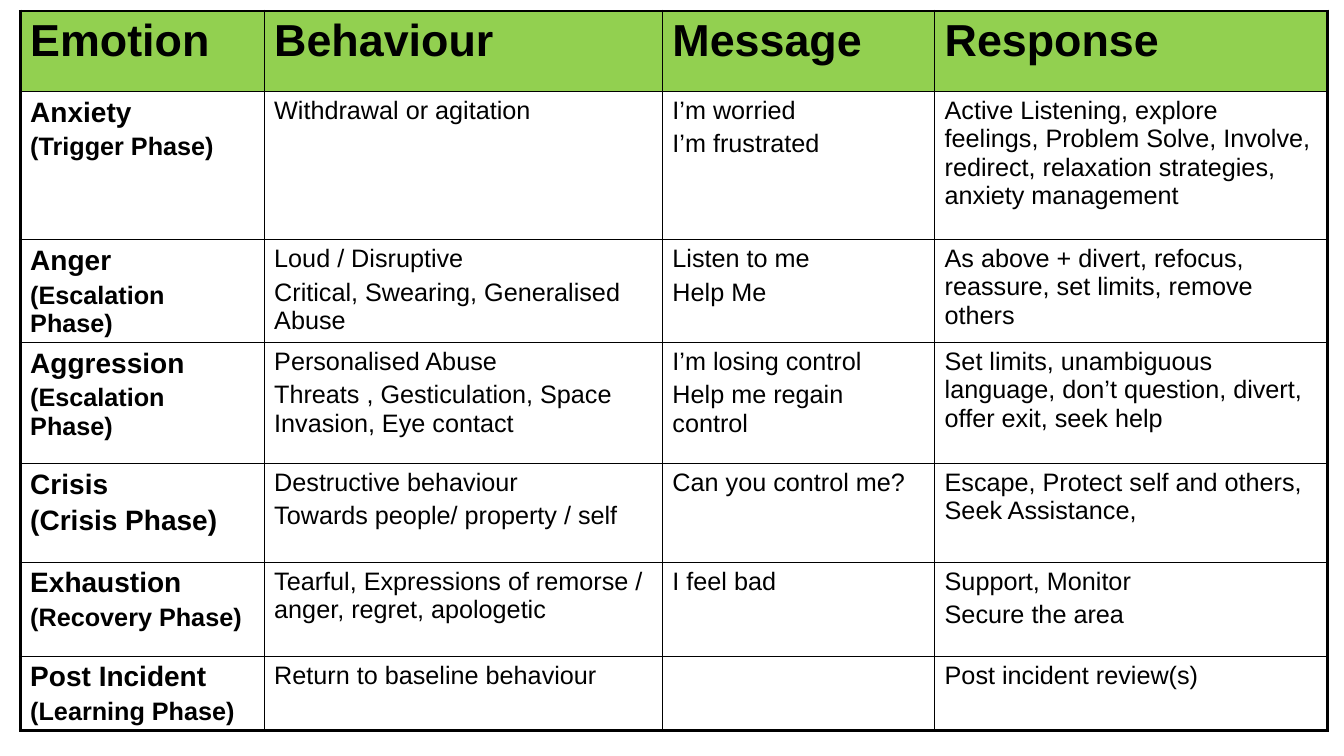
from lxml.etree import SubElement
from pptx import Presentation
from pptx.dml.color import RGBColor
from pptx.oxml.ns import qn
from pptx.util import Inches, Pt

COLORS = {"head": "92D050", "ink": "000000"}
FONT = "Arial"
HEADS = ["Emotion", "Behaviour", "Message", "Response"]
# Each row: phase name, phase note, note size, then the lines of the other cells
PHASES = [
    ("Anxiety", "(Trigger Phase)", 18,
     ["Withdrawal or agitation"],
     ["I’m worried", "I’m frustrated"],
     ["Active Listening, explore feelings, Problem Solve, Involve, redirect, "
      "relaxation strategies, anxiety management"]),
    ("Anger", "(Escalation Phase)", 18,
     ["Loud / Disruptive", "Critical, Swearing, Generalised Abuse"],
     ["Listen to me", "Help Me"],
     ["As above + divert, refocus, reassure, set limits, remove others"]),
    ("Aggression", "(Escalation Phase)", 18,
     ["Personalised Abuse",
      "Threats , Gesticulation, Space Invasion, Eye contact"],
     ["I’m losing control", "Help me regain control"],
     ["Set limits, unambiguous language, don’t question, divert, offer exit, "
      "seek help"]),
    ("Crisis", "(Crisis Phase)", 20,
     ["Destructive behaviour", "Towards people/ property / self"],
     ["Can you control me?"],
     ["Escape, Protect self and others, Seek Assistance,"]),
    ("Exhaustion", "(Recovery Phase)", 18,
     ["Tearful, Expressions of remorse / anger, regret, apologetic"],
     ["I feel bad"],
     ["Support, Monitor", "Secure the area"]),
    ("Post Incident", "(Learning Phase)", 18,
     ["Return to baseline behaviour"],
     [],
     ["Post incident review(s)"]),
]
WIDTHS = [2.42, 3.95, 2.7, 3.9]
HEIGHTS = [0.8, 1.47, 0.98, 1.2, 0.98, 0.93, 0.71]
LEFT, TOP = 0.2, 0.11
THIN, THICK = 1, 2.25


def write(cell, lines, sizes, bold=False):
    """Fill a cell with one paragraph per line, each with its own size."""
    frame = cell.text_frame
    for i, (text, size) in enumerate(zip(lines, sizes)):
        para = frame.add_paragraph() if i else frame.paragraphs[0]
        if i:
            para.space_before = Pt(size * 0.2)
        run = para.add_run()
        run.text = text
        run.font.name = FONT
        run.font.size = Pt(size)
        run.font.bold = bold
        run.font.color.rgb = RGBColor.from_string(COLORS["ink"])


def border(cell, row, col):
    """Draw thick lines on the table's outer edge and thin ones inside."""
    outer = {"L": col == 0, "R": col == len(WIDTHS) - 1,
             "T": row == 0, "B": row == len(HEIGHTS) - 1}
    props = cell._tc.get_or_add_tcPr()
    for side, edge in outer.items():
        line = SubElement(props, qn(f"a:ln{side}"),
                          w=str(Pt(THICK if edge else THIN)))
        fill = SubElement(line, qn("a:solidFill"))
        SubElement(fill, qn("a:srgbClr"), val=COLORS["ink"])


def main():
    deck = Presentation()
    deck.slide_width, deck.slide_height = Inches(13.33), Inches(7.5)
    slide = deck.slides.add_slide(deck.slide_layouts[6])
    table = slide.shapes.add_table(
        len(HEIGHTS), len(WIDTHS), Inches(LEFT), Inches(TOP),
        Inches(sum(WIDTHS)), Inches(sum(HEIGHTS))).table
    table.horz_banding = False
    for col, width in zip(table.columns, WIDTHS):
        col.width = Inches(width)
    for row, height in zip(table.rows, HEIGHTS):
        row.height = Inches(height)

    for r in range(len(HEIGHTS)):
        for c in range(len(WIDTHS)):
            cell = table.cell(r, c)
            border(cell, r, c)
            if r == 0:
                cell.fill.solid()
                cell.fill.fore_color.rgb = RGBColor.from_string(COLORS["head"])
            else:
                cell.fill.background()

    for c, head in enumerate(HEADS):
        write(table.cell(0, c), [head], [32], bold=True)
    for r, (name, note, size, *rest) in enumerate(PHASES, 1):
        write(table.cell(r, 0), [name, note], [20, size], bold=True)
        for c, lines in enumerate(rest, 1):
            write(table.cell(r, c), lines, [18] * len(lines))
    deck.save("out.pptx")


if __name__ == "__main__":
    main()
